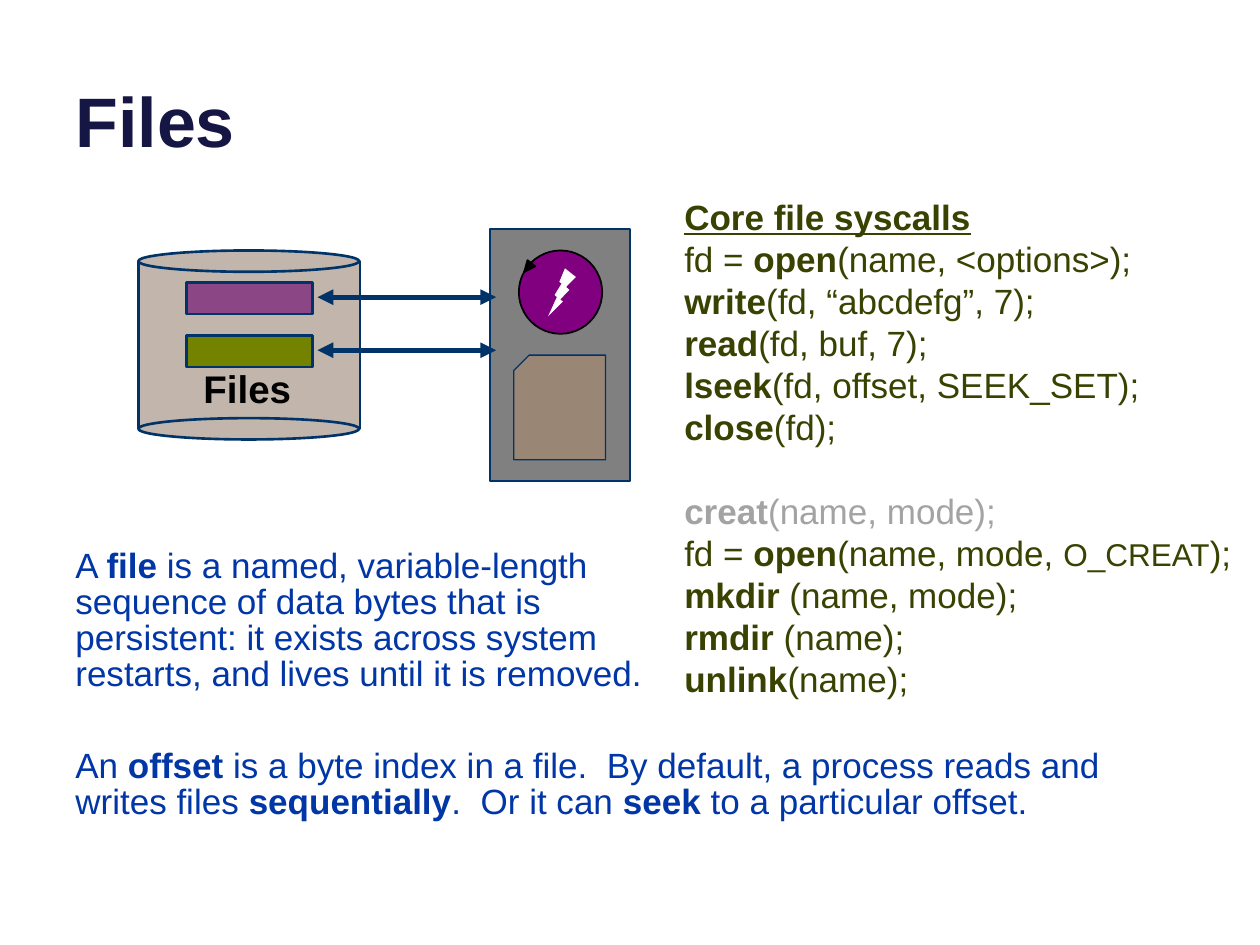
from lxml.etree import SubElement
from pptx import Presentation
from pptx.dml.color import RGBColor
from pptx.enum.shapes import MSO_CONNECTOR as Connector, MSO_SHAPE as Shape
from pptx.enum.text import MSO_ANCHOR as Anchor, MSO_AUTO_SIZE as AutoSize, PP_ALIGN as Align
from pptx.oxml.ns import qn
from pptx.util import Cm, Pt

NAVY, BLUE, OLIVE, GREY = "003367", "0036A6", "394200", "A3A3A3"
BLACK, WHITE, STONE = "000000", "FFFFFF", "C2B6AC"


def rgb(code):
    """Turn a hex string into a colour."""
    return RGBColor.from_string(code)


def write(frame, text, size=20, color=BLACK, bold=False, underline=False,
          align=Align.LEFT, spacing=None, before=0):
    """Add a paragraph in which * toggles bold and ^ toggles smaller letters."""
    first = frame.paragraphs[0]
    paragraph = frame.add_paragraph() if first.runs else first
    paragraph.alignment = align
    paragraph.space_before = Pt(before)
    if spacing:
        paragraph.line_spacing = spacing
    for i, part in enumerate(text.split("*")):
        for j, piece in enumerate(part.split("^")):
            if piece:
                run = paragraph.add_run()
                run.text = piece
                run.font.name = "Arial"
                run.font.size = Pt(size - 2 * (j % 2))
                run.font.bold = bold or i % 2 == 1
                run.font.underline = underline
                run.font.color.rgb = rgb(color)
    return paragraph


class Board:
    """Hold the current slide and the style of its elements."""

    def __init__(self, slide, edge=NAVY):
        """Keep the slide and the usual outline colour."""
        self.slide, self.edge = slide, edge

    def placeholder(self, index, box, anchor):
        """Move a placeholder and return its text frame."""
        holder = self.slide.placeholders[index]
        holder.left, holder.top, holder.width, holder.height = map(Cm, box)
        frame = holder.text_frame
        frame.word_wrap, frame.auto_size = True, AutoSize.NONE
        frame.vertical_anchor = anchor
        return frame

    def title(self, text, box, **style):
        """Fill the title placeholder."""
        write(self.placeholder(0, box, Anchor.BOTTOM), text, **style)

    def listing(self, lines, box):
        """Fill the body placeholder with unbulleted lines."""
        frame = self.placeholder(1, box, Anchor.TOP)
        for text, style in lines:
            properties = write(frame, text, **style)._p.get_or_add_pPr()
            properties.set("marL", "0")
            properties.set("indent", "0")
            SubElement(properties, qn("a:buNone"))

    def text(self, text, box, **style):
        """Add a wrapped text box."""
        frame = self.slide.shapes.add_textbox(*map(Cm, box)).text_frame
        frame.word_wrap, frame.auto_size = True, AutoSize.SHAPE_TO_FIT_TEXT
        write(frame, text, **style)

    def shape(self, kind, box, fill, width=1.5, edge=None, flip=False, turn=0, parent=None):
        """Add a filled preset shape, without outline when width is zero."""
        item = (parent or self.slide).shapes.add_shape(kind, *map(Cm, box))
        item.shadow.inherit = False
        item.fill.solid()
        item.fill.fore_color.rgb = rgb(fill)
        item.rotation = turn
        if width:
            item.line.width = Pt(width)
            item.line.color.rgb = rgb(edge or self.edge)
        else:
            item.line.fill.background()
        if flip:
            item.element.spPr.find(qn("a:xfrm")).set("flipH", "1")

    def double_arrow(self, left, right, y):
        """Add a horizontal line with a head at both ends."""
        arrow = self.slide.shapes.add_connector(
            Connector.STRAIGHT, Cm(left), Cm(y), Cm(right), Cm(y))
        arrow.line.width = Pt(3)
        arrow.line.color.rgb = rgb(self.edge)
        properties = arrow.element.spPr
        outline = properties.find(qn("a:ln"))
        for end in ("a:headEnd", "a:tailEnd"):
            SubElement(outline, qn(end), type="triangle")
        SubElement(properties, qn("a:effectLst"))


def main():
    """Build the slide about files and save it."""
    deck = Presentation()
    deck.slide_width, deck.slide_height = Cm(25.4), Cm(19.05)
    slide = deck.slides.add_slide(deck.slide_layouts[1])
    board = Board(slide)

    board.title("Files", (1.27, -0.94, 22.86, 4.32), size=40, color="161645", bold=True)
    calls = [
        "fd = *open*(name, <options>);",
        "*write*(fd, “abcdefg”, 7);",
        "*read*(fd, buf, 7);",
        "*lseek*(fd, offset, SEEK_SET);",
        "*close*(fd);",
    ]
    naming_calls = [
        "fd = *open*(name, mode, ^O_CREAT^);",
        "*mkdir* (name, mode);",
        "*rmdir* (name);",
        "*unlink*(name);",
    ]
    plain = dict(color=OLIVE)
    board.listing(
        [("Core file syscalls", dict(color=OLIVE, bold=True, underline=True))]
        + [(call, plain) for call in calls]
        + [("*creat*(name, mode);", dict(color=GREY, before=24))]
        + [(call, plain) for call in naming_calls],
        (13.54, 3.81, 12.9, 10.52))

    board.shape(Shape.RECTANGLE, (9.88, 4.62, 2.82, 5.08), "808080")
    process = slide.shapes.add_group_shape()
    board.shape(Shape.OVAL, (10.46, 5.05, 1.68, 1.68), "800080", 1, BLACK, parent=process)
    board.shape(Shape.LIGHTNING_BOLT, (11.05, 5.41, 0.56, 0.97), WHITE, 0,
                flip=True, parent=process)
    board.shape(Shape.ISOSCELES_TRIANGLE, (10.54, 5.28, 0.2, 0.23), BLACK, 1, BLACK,
                turn=219, parent=process)
    board.shape(Shape.SNIP_1_RECTANGLE, (10.36, 7.16, 1.85, 2.11), "998674", 0.75, flip=True)

    board.shape(Shape.RECTANGLE, (2.79, 5.26, 4.47, 3.38), STONE)
    for rim in (5.05, 8.43):
        board.shape(Shape.OVAL, (2.79, rim, 4.45, 0.43), STONE)
    for top, fill in ((5.69, "8B4785"), (6.76, "738300")):
        board.double_arrow(6.4, 10, top + 0.3)
        board.shape(Shape.RECTANGLE, (3.76, top, 2.54, 0.64), fill)
    board.text("Files", (2.84, 7.24, 4.29, 1.19), size=22, bold=True, align=Align.CENTER)

    board.text("A *file* is a named, variable-length sequence of data bytes that is "
               "persistent: it exists across system restarts, and lives until it is removed.",
               (1.27, 10.97, 12.5, 3.18), color=BLUE, spacing=0.85)
    board.text("An *offset* is a byte index in a file.  By default, a process reads and "
               "writes files *sequentially*.  Or it can *seek* to a particular offset.",
               (1.27, 14.99, 22.02, 1.73), color=BLUE, spacing=0.85)
    deck.save("out.pptx")


if __name__ == "__main__":
    main()
